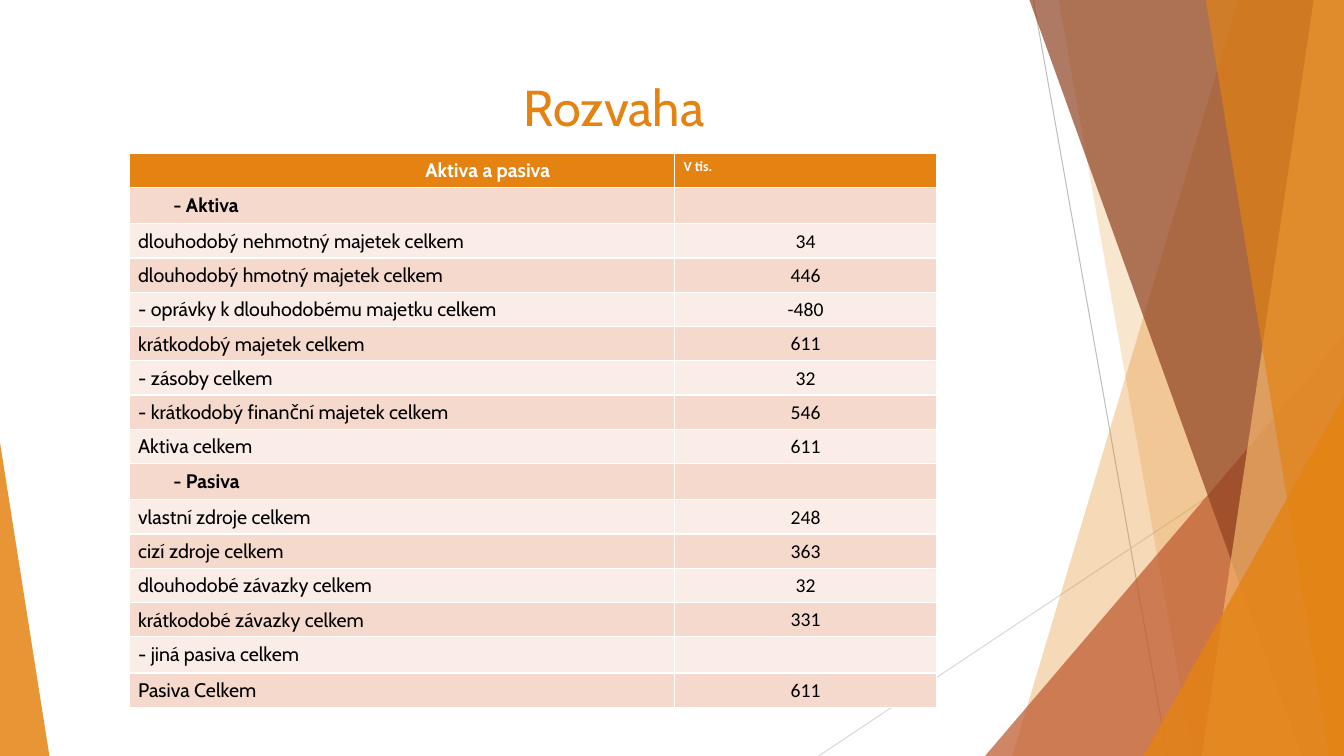
from lxml.etree import SubElement
from pptx import Presentation
from pptx.dml.color import RGBColor
from pptx.enum.shapes import MSO_CONNECTOR, MSO_SHAPE
from pptx.enum.text import MSO_ANCHOR, PP_ALIGN
from pptx.oxml.ns import qn
from pptx.util import Inches, Pt

ORANGE = RGBColor(0xE4, 0x83, 0x12)
PEACH = RGBColor(0xF3, 0xB5, 0x6C)
RUST = RGBColor(0xBD, 0x58, 0x2C)
BROWN = RGBColor(0x8E, 0x42, 0x21)
ROSE = RGBColor(0xF5, 0xD9, 0xCC)
BLUSH = RGBColor(0xFA, 0xED, 0xE7)
SILVER = RGBColor(0xBF, 0xBF, 0xBF)
PALE = RGBColor(0xD9, 0xD9, 0xD9)
WHITE = RGBColor(0xFF, 0xFF, 0xFF)
BLACK = RGBColor(0, 0, 0)

WIDE, HIGH = 13.33, 7.5
LEFT = 1.28
ROW = 0.34


def put(frame, text, size=14, font="Cabin", color=BLACK, bold=False, align=PP_ALIGN.LEFT, space=1.07):
    line = frame.paragraphs[0]
    line.alignment = align
    line.line_spacing = space
    run = line.add_run()
    run.text = text
    run.font.size = Pt(size)
    run.font.name = font
    run.font.bold = bold
    run.font.color.rgb = color


def paint(shape, color, share):
    shape.shadow.inherit = False
    shape.line.fill.background()
    shape.fill.solid()
    shape.fill.fore_color.rgb = color
    tint = shape.fill._xPr.find(qn("a:solidFill"))[0]
    SubElement(tint, qn("a:alpha")).set("val", str(share * 1000))


deck = Presentation()
deck.slide_width, deck.slide_height = Inches(WIDE), Inches(HIGH)
slide = deck.slides.add_slide(deck.slide_layouts[5])
shapes = slide.shapes

for ends, color in [((10.25, 0, 11.58, HIGH), SILVER), ((WIDE, 4.03, 8.12, HIGH), PALE)]:
    ray = shapes.add_connector(MSO_CONNECTOR.STRAIGHT, *map(Inches, ends))
    ray.line.color.rgb = color
    ray.line.width = Pt(0.75)
    SubElement(ray._element.spPr, qn("a:effectLst"))

BAND, WEDGE = "band", "wedge"
facets = [
    (BAND, 12.28, 10.04, ORANGE, 30),
    (BAND, 10.5, 11.83, ORANGE, 20),
    (WEDGE, 9.77, 3.56, 4.17, 1, RUST, 72),
    (BAND, 10.21, 12.91, BROWN, 70),
    (BAND, 13.03, 11.92, PEACH, 70),
    (BAND, 11.96, 13.18, ORANGE, 65),
    (WEDGE, 11.34, 1.99, 3.57, 1, ORANGE, 80),
    (WEDGE, 0, 0.49, 3.11, 0, ORANGE, 85),
]
for kind, *size, color, share in facets:
    if kind == BAND:
        top, base = size
        pen = shapes.build_freeform(Inches(top), 0)
        rest = [(WIDE, 0), (WIDE, HIGH), (base, HIGH)]
        pen.add_line_segments([(Inches(x), Inches(y)) for x, y in rest])
        facet = pen.convert_to_shape()
    else:
        x, width, height, peak = size
        box = map(Inches, (x, HIGH - height, width, height))
        facet = shapes.add_shape(MSO_SHAPE.ISOSCELES_TRIANGLE, *box)
        facet.adjustments[0] = peak
    paint(facet, color, share)

title = shapes.title
title.left, title.top, title.width, title.height = map(Inches, (LEFT, 0.7, 9.62, 1.42))
title.text_frame.vertical_anchor = MSO_ANCHOR.TOP
put(title.text_frame, "Rozvaha", size=36, color=ORANGE, align=PP_ALIGN.CENTER, space=1.0)

rows = [
    ("Aktiva a pasiva", "V tis."),
    ("- Aktiva", ""),
    ("dlouhodobý nehmotný majetek celkem", "34"),
    ("dlouhodobý hmotný majetek celkem", "446"),
    ("- oprávky k dlouhodobému majetku celkem", "-480"),
    ("krátkodobý majetek celkem", "611"),
    ("- zásoby celkem", "32"),
    ("- krátkodobý finanční majetek celkem", "546"),
    ("Aktiva celkem", "611"),
    ("- Pasiva", ""),
    ("vlastní zdroje celkem", "248"),
    ("cizí zdroje celkem", "363"),
    ("dlouhodobé závazky celkem", "32"),
    ("krátkodobé závazky celkem", "331"),
    ("- jiná pasiva celkem", ""),
    ("Pasiva Celkem", "611"),
]
heads = {"Aktiva a pasiva": 2.94, "- Aktiva": 0.44, "- Pasiva": 0.44}
spot = map(Inches, (LEFT, 1.52, 8.01, ROW * len(rows)))
table = shapes.add_table(len(rows), 2, *spot).table
for column, width in zip(table.columns, (5.41, 2.6)):
    column.width = Inches(width)

for r, (label, value) in enumerate(rows):
    table.rows[r].height = Inches(ROW)
    fill = ORANGE if r == 0 else ROSE if r % 2 else BLUSH
    for c in range(2):
        cell = table.cell(r, c)
        cell.fill.solid()
        cell.fill.fore_color.rgb = fill
        cell.margin_left = cell.margin_right = Inches(0.09)
        cell.margin_top = cell.margin_bottom = Inches(0.04)
    name, sum_ = table.rows[r].cells
    name.margin_left = Inches(heads.get(label, 0.09))
    put(name.text_frame, label, bold=label in heads, color=BLACK if r else WHITE)
    if r:
        put(sum_.text_frame, value, font="Calibri", align=PP_ALIGN.CENTER)
    else:
        put(sum_.text_frame, value, size=10, font="Calibri", color=WHITE, bold=True)

deck.save("out.pptx")
